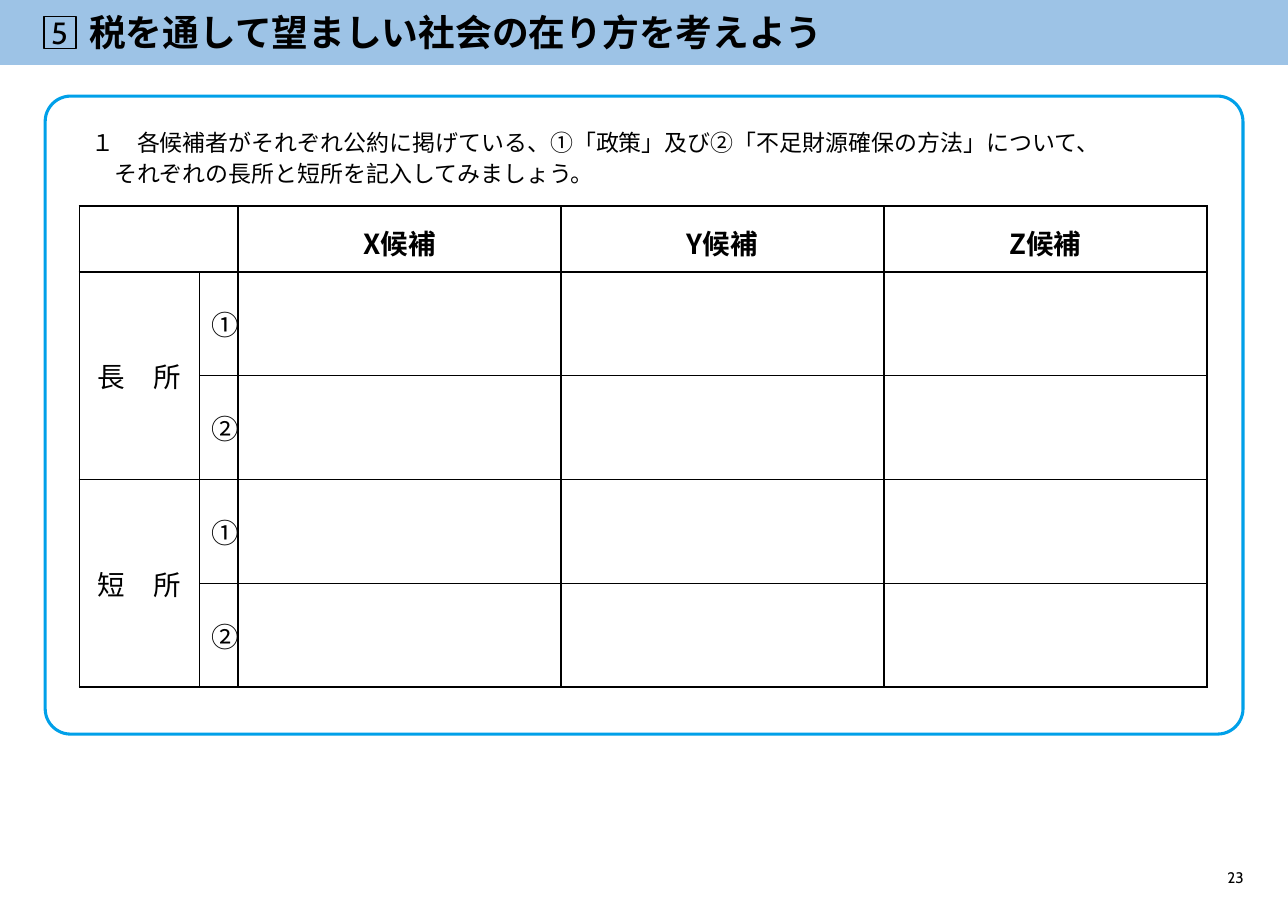
from dataclasses import dataclass

from lxml.etree import SubElement
from pptx import Presentation
from pptx.dml.color import RGBColor
from pptx.enum.shapes import MSO_SHAPE
from pptx.enum.text import MSO_ANCHOR, PP_ALIGN
from pptx.oxml.ns import qn
from pptx.shapes.autoshape import Shape
from pptx.slide import Slide
from pptx.table import _Cell
from pptx.text.text import TextFrame, _Paragraph
from pptx.util import Pt

COLORS = {"text": "000000", "band": "9DC3E6", "frame": "00A0E9"}
LATIN_FONT = "Cabin"
JAPANESE_FONT = "Noto Sans CJK JP"

SLIDE_WIDTH, SLIDE_HEIGHT = 841.7, 595.4
TABLE_LEFT, TABLE_TOP = 51.8, 134.6
COLUMN_WIDTHS = [78.5, 25.2] + [211.1] * 3
ROW_HEIGHTS = [43.2] + [67.8] * 4
CANDIDATES = ["X候補", "Y候補", "Z候補"]
ASPECTS = ["長　所", "短　所"]
NUMBERS = ["①", "②"]
INSTRUCTIONS = [
    ("１　各候補者がそれぞれ公約に掲げている、①「政策」及び②「不足財源確保の方法」について、", 15),
    ("それぞれの長所と短所を記入してみましょう。", 30),
]


@dataclass
class Box:
    left: float
    top: float
    width: float
    height: float

    def lengths(self) -> tuple[Pt, Pt, Pt, Pt]:
        return Pt(self.left), Pt(self.top), Pt(self.width), Pt(self.height)


@dataclass
class Panel:
    kind: MSO_SHAPE
    box: Box
    fill: str | None = None
    line: str | None = None
    line_width: float = 1


@dataclass
class Label:
    text: str
    box: Box
    size: float
    alignment: PP_ALIGN


BACK_PANELS = [
    Panel(MSO_SHAPE.RECTANGLE, Box(0, 0, SLIDE_WIDTH, 42.5), fill="band"),
    Panel(MSO_SHAPE.RECTANGLE, Box(28.6, 10.8, 21, 21), line="text"),
]
FRAME = Panel(MSO_SHAPE.ROUNDED_RECTANGLE, Box(29.5, 62.8, 782.8, 417), line="frame", line_width=2)
LABELS = [
    Label("5", Box(30.2, 9.4, 17.3, 24.5), 20, PP_ALIGN.CENTER),
    Label("23", Box(802, 567.4, 10.8, 12.2), 10, PP_ALIGN.RIGHT),
]


def rgb(name: str) -> RGBColor:
    return RGBColor.from_string(COLORS[name])


def add_panel(slide: Slide, panel: Panel) -> Shape:
    shape = slide.shapes.add_shape(panel.kind, *panel.box.lengths())
    shape.shadow.inherit = False
    if panel.fill:
        shape.fill.solid()
        shape.fill.fore_color.rgb = rgb(panel.fill)
    else:
        shape.fill.background()
    if panel.line:
        shape.line.color.rgb = rgb(panel.line)
        shape.line.width = Pt(panel.line_width)
    else:
        shape.line.fill.background()
    return shape


def write(paragraph: _Paragraph, text: str, name: str, size: float, bold: bool = False) -> None:
    run = paragraph.add_run()
    run.text = text
    for attribute, value in {"name": name, "size": Pt(size), "bold": bold}.items():
        setattr(run.font, attribute, value)
    run.font.color.rgb = rgb("text")
    SubElement(run.font._element, qn("a:ea"), typeface=JAPANESE_FONT)


def format_frame(frame: TextFrame, wrap: bool) -> None:
    frame.word_wrap = wrap
    frame.vertical_anchor = MSO_ANCHOR.TOP
    for side in ("left", "top", "right", "bottom"):
        setattr(frame, f"margin_{side}", Pt(0))


def add_title(slide: Slide) -> None:
    title = slide.shapes.title
    title.left, title.top, title.width, title.height = Box(58.3, 9.4, 765.4, 24.5).lengths()
    format_frame(title.text_frame, wrap=True)
    paragraph = title.text_frame.paragraphs[0]
    paragraph.alignment = PP_ALIGN.LEFT
    paragraph.line_spacing = 0.9
    write(paragraph, "税を通して望ましい社会の在り方を考えよう", LATIN_FONT, 24, bold=True)
    slide.shapes._spTree.append(title._element)


def add_label(slide: Slide, label: Label) -> None:
    frame = slide.shapes.add_textbox(*label.box.lengths()).text_frame
    format_frame(frame, wrap=False)
    frame.paragraphs[0].alignment = label.alignment
    write(frame.paragraphs[0], label.text, LATIN_FONT, label.size)


def add_instructions(slide: Slide) -> None:
    frame = slide.shapes.add_textbox(*Box(44.6, 81.4, 744.5, 41.8).lengths()).text_frame
    format_frame(frame, wrap=True)
    for index, (text, indent) in enumerate(INSTRUCTIONS):
        paragraph = frame.add_paragraph() if index else frame.paragraphs[0]
        paragraph.line_spacing = 1.14
        paragraph._p.get_or_add_pPr().set("marL", str(Pt(indent)))
        write(paragraph, text, JAPANESE_FONT, 15)


def border_width(row: int, column: int, side: str) -> float:
    """Thin lines separate ① from ②, and an aspect from its numbers."""
    beside_aspect = row > 0 and (column, side) in {(0, "R"), (1, "L")}
    between_numbers = column > 0 and row > 0 and side == ("B" if row % 2 else "T")
    return 0.5 if beside_aspect or between_numbers else 1


def format_cell(cell: _Cell, row: int, column: int) -> None:
    properties = cell._tc.get_or_add_tcPr()
    for side in "LRTB":
        width = str(Pt(border_width(row, column, side)))
        border = SubElement(properties, qn(f"a:ln{side}"), w=width)
        fill = SubElement(border, qn("a:solidFill"))
        SubElement(fill, qn("a:srgbClr"), val=COLORS["text"])
    cell.fill.background()
    cell.vertical_anchor = MSO_ANCHOR.MIDDLE
    margins = {"left": 7.9, "top": 4.3, "right": 7.9, "bottom": 4.3 if row else 0}
    for side, margin in margins.items():
        setattr(cell, f"margin_{side}", Pt(margin))


def fill_cell(cell: _Cell, text: str, bold: bool = False) -> None:
    paragraph = cell.text_frame.paragraphs[0]
    paragraph.alignment = PP_ALIGN.CENTER
    write(paragraph, text, JAPANESE_FONT, 18, bold)


def add_candidate_table(slide: Slide) -> None:
    box = Box(TABLE_LEFT, TABLE_TOP, sum(COLUMN_WIDTHS), sum(ROW_HEIGHTS))
    table = slide.shapes.add_table(len(ROW_HEIGHTS), len(COLUMN_WIDTHS), *box.lengths()).table
    table.first_row = table.horz_banding = False
    for column, width in enumerate(COLUMN_WIDTHS):
        table.columns[column].width = Pt(width)
    for row, height in enumerate(ROW_HEIGHTS):
        table.rows[row].height = Pt(height)
        for column in range(len(COLUMN_WIDTHS)):
            format_cell(table.cell(row, column), row, column)
    table.cell(0, 0).merge(table.cell(0, 1))
    for column, candidate in enumerate(CANDIDATES, start=2):
        fill_cell(table.cell(0, column), candidate, bold=True)
    for index, aspect in enumerate(ASPECTS):
        first_row = 1 + index * len(NUMBERS)
        table.cell(first_row, 0).merge(table.cell(first_row + 1, 0))
        fill_cell(table.cell(first_row, 0), aspect)
        for row, number in enumerate(NUMBERS, start=first_row):
            fill_cell(table.cell(row, 1), number)


def main() -> None:
    presentation = Presentation()
    presentation.slide_width, presentation.slide_height = Pt(SLIDE_WIDTH), Pt(SLIDE_HEIGHT)
    slide = presentation.slides.add_slide(presentation.slide_layouts[5])
    for panel in BACK_PANELS:
        add_panel(slide, panel)
    add_candidate_table(slide)
    add_title(slide)
    for label in LABELS:
        add_label(slide, label)
    add_instructions(slide)
    add_panel(slide, FRAME).adjustments[0] = 0.04
    presentation.save("out.pptx")


if __name__ == "__main__":
    main()
